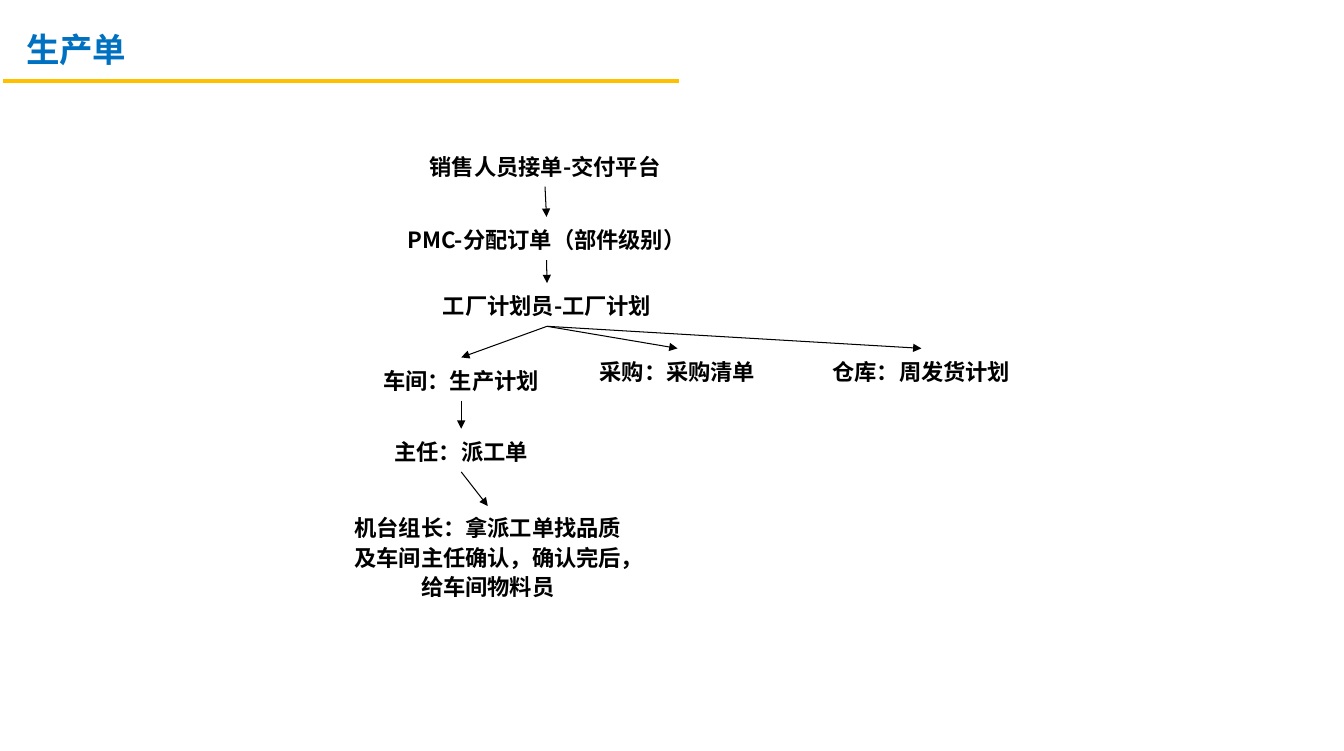
from dataclasses import dataclass

from lxml import etree
from pptx import Presentation
from pptx.dml.color import RGBColor
from pptx.enum.shapes import MSO_CONNECTOR
from pptx.enum.text import MSO_ANCHOR, MSO_AUTO_SIZE, PP_ALIGN
from pptx.oxml.ns import qn
from pptx.util import Pt

STRAIGHT = MSO_CONNECTOR.STRAIGHT
TOP, MIDDLE = MSO_ANCHOR.TOP, MSO_ANCHOR.MIDDLE
LEFT, CENTER = PP_ALIGN.LEFT, PP_ALIGN.CENTER
NO_FIT = MSO_AUTO_SIZE.NONE
EMU_PER_PX = 9144
TITLE_ONLY = 5
TOP_SITE, BOTTOM_SITE = 0, 2


@dataclass(frozen=True)
class Theme:
    """Colours, font and sizes of the slide."""
    font: str = "Noto Sans CJK SC"
    title: str = "0070C0"
    rule: str = "FFC000"
    ink: str = "000000"
    title_size: int = 24
    step_size: int = 16
    rule_width: float = 3
    arrow_width: float = 0.75


THEME = Theme()

STEPS = {
    "sales": ("销售人员接单-交付平台", (417, 143, 252, 43)),
    "pmc": ("PMC-分配订单（部件级别）", (392, 216, 305, 43)),
    "planner": ("工厂计划员-工厂计划", (419, 282, 252, 43)),
    "workshop": ("车间：生产计划", (378, 356, 163, 43)),
    "purchasing": ("采购：采购清单", (607, 347, 136, 43)),
    "warehouse": ("仓库：周发货计划", (850, 347, 136, 43)),
    "director": ("主任：派工单", (378, 427, 163, 43)),
    "leader": ("机台组长：拿派工单找品质及车间主任确认，确认完后，给车间物料员",
               (340, 504, 292, 99)),
}
WRAPPED = {"leader"}
FLOW = [
    ("sales", "pmc"), ("pmc", "planner"),
    ("planner", "workshop"), ("planner", "purchasing"), ("planner", "warehouse"),
    ("workshop", "director"), ("director", "leader"),
]


def px(*values):
    """Turn pixel lengths into EMU."""
    return [value * EMU_PER_PX for value in values]


def write(sp, text, *, size, color, align=LEFT, anchor=TOP, wrap=True, spacing=1.0):
    """Put formatted bold text into a shape."""
    tf = sp.text_frame
    tf.auto_size = NO_FIT
    tf.word_wrap = wrap
    tf.vertical_anchor = anchor
    p = tf.paragraphs[0]
    p.alignment = align
    p.line_spacing = spacing
    r = p.add_run()
    r.text = text
    r.font.size = Pt(size)
    r.font.bold = True
    r.font.color.rgb = RGBColor.from_string(color)
    r.font.name = THEME.font
    latin = r.font._element.find(qn("a:latin"))
    ea = etree.Element(qn("a:ea"), typeface=THEME.font)
    latin.addnext(ea)


def add_title(slide, text):
    """Place and fill the title placeholder."""
    sp = slide.shapes.title
    sp.left, sp.top, sp.width, sp.height = px(16, 24, 324, 50)
    write(sp, text, size=THEME.title_size, color=THEME.title)


def add_step(slide, text, box, wrap):
    """Add one step of the flow and return its text box."""
    sp = slide.shapes.add_textbox(*px(*box))
    write(sp, text, size=THEME.step_size, color=THEME.ink, align=CENTER,
          anchor=MIDDLE, wrap=wrap, spacing=1.1)
    return sp


def add_line(slide, ends, color, width):
    """Add a straight line without shadow."""
    line = slide.shapes.add_connector(STRAIGHT, *px(*ends))
    line.line.color.rgb = RGBColor.from_string(color)
    line.line.width = Pt(width)
    etree.SubElement(line._element.spPr, qn("a:effectLst"))
    return line


def add_arrow(slide, source, target):
    """Join the bottom of one step to the top of the next."""
    arrow = add_line(slide, (0, 0, 0, 0), THEME.ink, THEME.arrow_width)
    arrow.begin_connect(source, BOTTOM_SITE)
    arrow.end_connect(target, TOP_SITE)
    ln = arrow.line._get_or_add_ln()
    etree.SubElement(ln, qn("a:tailEnd"), type="triangle")


def main():
    """Build the production order slide."""
    prs = Presentation()
    prs.slide_width, prs.slide_height = px(1339, 748)
    slide = prs.slides.add_slide(prs.slide_layouts[TITLE_ONLY])
    add_title(slide, "生产单")
    add_line(slide, (3, 81, 677, 81), THEME.rule, THEME.rule_width)
    steps = {name: add_step(slide, text, box, name in WRAPPED)
             for name, (text, box) in STEPS.items()}
    for source, target in FLOW:
        add_arrow(slide, steps[source], steps[target])
    prs.save("out.pptx")


if __name__ == "__main__":
    main()
